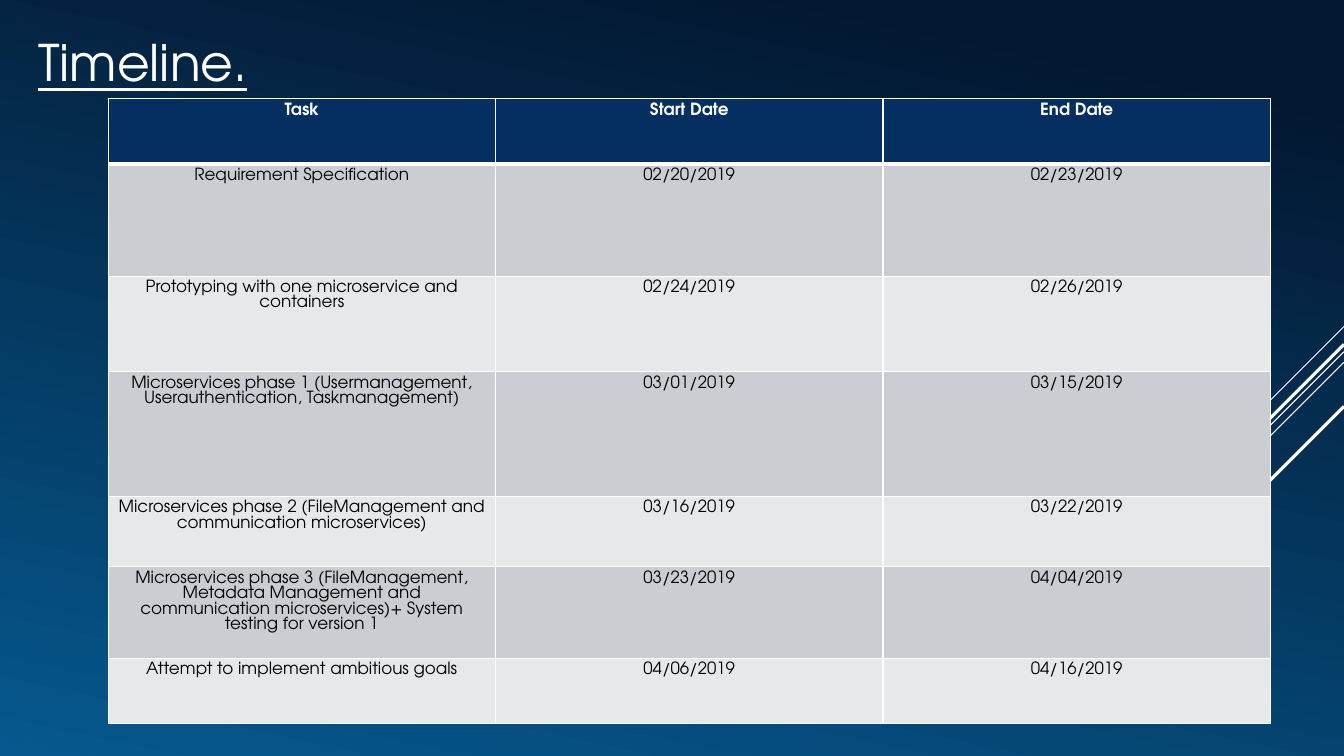
from dataclasses import dataclass

from lxml.etree import SubElement
from pptx import Presentation
from pptx.dml.color import RGBColor
from pptx.enum.shapes import MSO_CONNECTOR
from pptx.enum.text import MSO_ANCHOR, PP_ALIGN
from pptx.oxml.ns import qn
from pptx.util import Emu, Pt

FONT = "TeX Gyre Adventor"
COLORS = {
    "night": "031730",
    "ocean": "06588E",
    "header": "052F61",
    "band_dark": "CCCDD2",
    "band_light": "E7E8EA",
    "white": "FFFFFF",
    "black": "000000",
}
SLIDE_W, SLIDE_H = 1280, 720


@dataclass(frozen=True)
class Streak:
    """A 45° line running down and left from the right slide edge."""
    top: int
    run: int
    weight: float


@dataclass(frozen=True)
class Row:
    height: int
    cells: tuple[str, str, str]


STREAKS = [
    Streak(311, 96, 0.75),
    Streak(335, 313, 0.75),
    Streak(345, 199, 0.75),
    Streak(328, 183, 2.25),
    Streak(387, 133, 2.25),
]
ROWS = [
    Row(62, ("Task", "Start Date", "End Date")),
    Row(107, ("Requirement Specification", "02/20/2019", "02/23/2019")),
    Row(91, ("Prototyping with one microservice and containers", "02/24/2019", "02/26/2019")),
    Row(119, ("Microservices phase 1 (Usermanagement, Userauthentication, Taskmanagement)",
              "03/01/2019", "03/15/2019")),
    Row(67, ("Microservices phase 2 (FileManagement and communication microservices)",
             "03/16/2019", "03/22/2019")),
    Row(87, ("Microservices phase 3 (FileManagement, Metadata Management and "
             "communication microservices)+ System testing for version 1",
             "03/23/2019", "04/04/2019")),
    Row(62, ("Attempt to implement ambitious goals", "04/06/2019", "04/16/2019")),
]


def px(n: int) -> Emu:
    return Emu(n * 9525)


def rgb(name: str) -> RGBColor:
    return RGBColor.from_string(COLORS[name])


def style_run(r, size: int, color: str, bold: bool = False) -> None:
    r.font.name = FONT
    r.font.size = Pt(size)
    r.font.bold = bold
    r.font.color.rgb = rgb(color)


def paint_background(s) -> None:
    fill = s.background.fill
    fill.gradient()
    fill.gradient_angle = 258
    for stop, color, position in zip(fill.gradient_stops, ("night", "ocean"), (0.1, 1)):
        stop.color.rgb = rgb(color)
        stop.position = position


def add_streak(s, streak: Streak) -> None:
    line = s.shapes.add_connector(
        MSO_CONNECTOR.STRAIGHT, px(SLIDE_W), px(streak.top),
        px(SLIDE_W - streak.run), px(streak.top + streak.run))
    line.line.color.rgb = rgb("white")
    line.line.width = Pt(streak.weight)
    SubElement(line._element.spPr, qn("a:effectLst"))


def add_title(s, text: str) -> None:
    tf = s.shapes.add_textbox(px(27), px(25), px(1236), px(156)).text_frame
    tf.word_wrap = True
    tf.vertical_anchor = MSO_ANCHOR.TOP
    tf.text = text
    r = tf.paragraphs[0].runs[0]
    style_run(r, 36, "white")
    r.font.underline = True


def set_borders(cell, top: int, bottom: int) -> None:
    """Draw white borders; the top and bottom weights are in points."""
    tc_pr = cell._tc.get_or_add_tcPr()
    for tag, weight in (("lnL", 1), ("lnR", 1), ("lnT", top), ("lnB", bottom)):
        ln = SubElement(tc_pr, qn(f"a:{tag}"), w=str(Pt(weight)))
        fill = SubElement(ln, qn("a:solidFill"))
        SubElement(fill, qn("a:srgbClr"), val=COLORS["white"])


def fill_cell(cell, text: str, row: int) -> None:
    is_header = row == 0
    set_borders(cell, 3 if row == 1 else 1, 3 if is_header else 1)
    cell.fill.solid()
    band = "band_dark" if row % 2 else "band_light"
    cell.fill.fore_color.rgb = rgb("header" if is_header else band)
    cell.margin_left = cell.margin_right = px(7)
    cell.margin_top = px(4)
    cell.margin_bottom = 0
    cell.text = text
    p = cell.text_frame.paragraphs[0]
    p.alignment = PP_ALIGN.CENTER
    p.line_spacing = Pt(11)
    style_run(p.runs[0], 12, "white" if is_header else "black", is_header)


def add_schedule(s) -> None:
    col_w = 369
    height = sum(row.height for row in ROWS)
    table = s.shapes.add_table(
        len(ROWS), 3, px(103), px(94), px(3 * col_w), px(height)).table
    table.horz_banding = False
    for column in table.columns:
        column.width = px(col_w)
    for i, row in enumerate(ROWS):
        table.rows[i].height = px(row.height)
        for j, text in enumerate(row.cells):
            fill_cell(table.cell(i, j), text, i)


def main() -> None:
    prs = Presentation()
    prs.slide_width, prs.slide_height = px(SLIDE_W), px(SLIDE_H)
    s = prs.slides.add_slide(prs.slide_layouts[6])
    paint_background(s)
    for streak in STREAKS:
        add_streak(s, streak)
    add_title(s, "Timeline.")
    add_schedule(s)
    prs.save("out.pptx")


if __name__ == "__main__":
    main()
